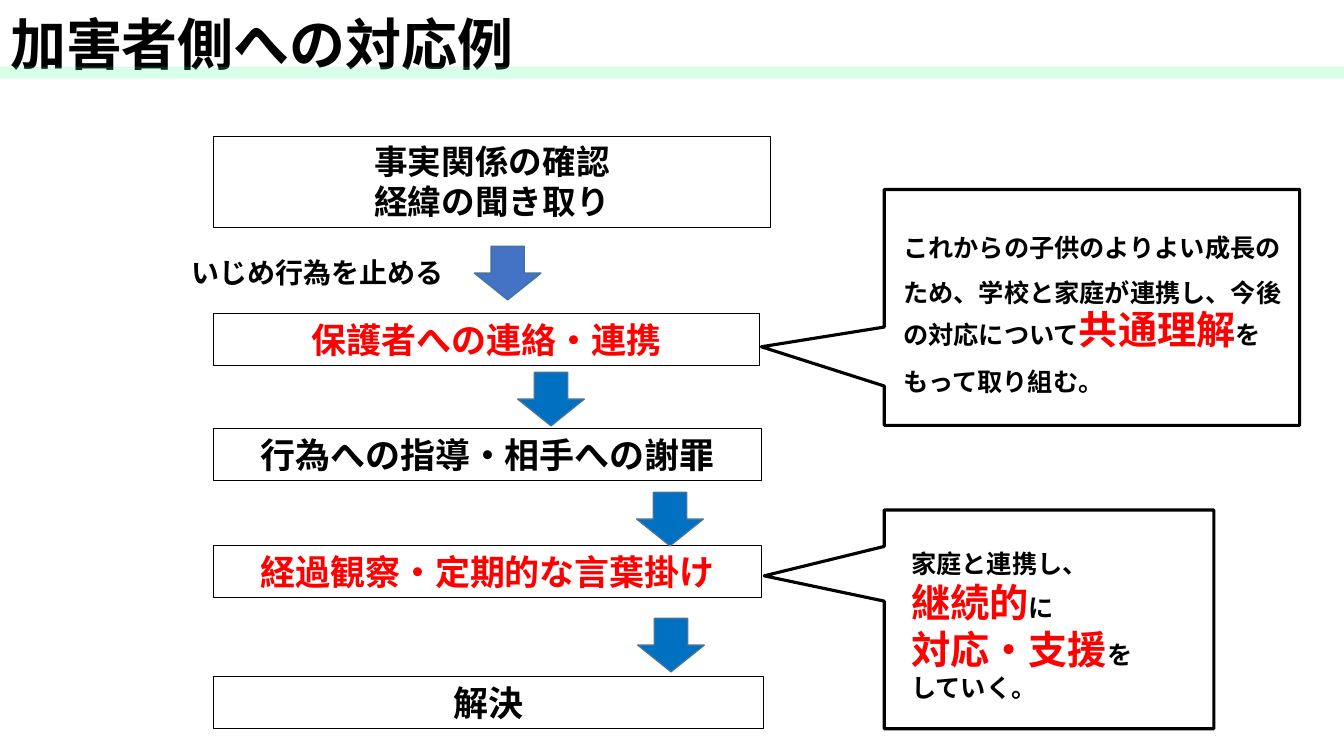
from pptx import Presentation
from pptx.dml.color import RGBColor
from pptx.enum.shapes import MSO_SHAPE as SHAPE
from pptx.enum.text import MSO_ANCHOR as ANCHOR, MSO_AUTO_SIZE as AUTO, PP_ALIGN as ALIGN
from pptx.oxml.ns import qn
from pptx.util import Inches, Pt
from lxml.etree import SubElement

FONT = "Noto Sans CJK JP"
COLORS = {"black": "000000", "red": "FF0000", "white": "FFFFFF", "mint": "3BFF8A",
          "indigo": "4472C4", "blue": "0070C0", "edge": "43739E"}


def add_shape(kind, at, fill=None, line=None, width=1):
    s = slide.shapes.add_shape(kind, *map(Inches, at))
    s.shadow.inherit = False
    if fill:
        s.fill.solid()
        s.fill.fore_color.rgb = RGBColor.from_string(COLORS[fill])
    else:
        s.fill.background()
    if line:
        s.line.color.rgb = RGBColor.from_string(COLORS[line])
        s.line.width = Pt(width)
    else:
        s.line.fill.background()
    return s


def write(s, paragraphs, align=ALIGN.LEFT, anchor=ANCHOR.TOP, fit=AUTO.SHAPE_TO_FIT_TEXT):
    """Fill a shape with paragraphs, each a list of (text, size, colour) runs."""
    tf = s.text_frame
    tf.word_wrap, tf.auto_size, tf.vertical_anchor = True, fit, anchor
    for i, runs in enumerate(paragraphs):
        p = tf.add_paragraph() if i else tf.paragraphs[0]
        p.alignment = align
        for text, size, color in runs:
            r = p.add_run()
            r.text = text
            r.font.size, r.font.bold, r.font.name = Pt(size), True, FONT
            r.font.color.rgb = RGBColor.from_string(COLORS[color])
            SubElement(r.font._element, qn("a:ea"), typeface=FONT)
    return tf


prs = Presentation()
prs.slide_width, prs.slide_height = Inches(13.33), Inches(7.5)
slide = prs.slides.add_slide(prs.slide_layouts[5])

# Title and the translucent band across its foot
title = slide.shapes.title
title.left, title.top, title.width, title.height = map(Inches, (0, 0.04, 9.76, 0.77))
write(title, [[("加害者側への対応例", 40, "black")]], anchor=ANCHOR.MIDDLE, fit=AUTO.NONE)
band = add_shape(SHAPE.RECTANGLE, (0, 0.66, 13.33, 0.12), "mint")
SubElement(band.fill._xPr.find(qn("a:solidFill"))[0], qn("a:alpha"), val="19000")

# Steps: top, width, height, size, colour, lines
STEPS = [
    (1.35, 5.52, 0.91, 24, "black", ["事実関係の確認", "経緯の聞き取り"]),
    (3.11, 5.41, 0.52, 25, "red", ["保護者への連絡・連携"]),
    (4.25, 5.43, 0.52, 25, "black", ["行為への指導・相手への謝罪"]),
    (5.41, 5.43, 0.52, 25, "red", ["経過観察・定期的な言葉掛け"]),
    (6.71, 5.45, 0.52, 25, "black", ["解決"]),
]
for top, width, height, size, color, lines in STEPS:
    s = add_shape(SHAPE.RECTANGLE, (2.12, top, width, height), line="black", width=0.75)
    write(s, [[(line, size, color)] for line in lines], ALIGN.CENTER)

# Arrows between the steps
for left, top, fill in [(4.77, 2.38, "indigo"), (5.2, 3.63, "blue"),
                        (6.38, 4.82, "blue"), (6.39, 6.07, "blue")]:
    arrow = add_shape(SHAPE.RIGHT_ARROW, (left, top, 0.53, 0.66), fill, "edge")
    arrow.rotation = 90

# Callouts pointing back at the red steps
for at, tip, fill in [((8.77, 1.88, 4.12, 2.34), (-0.796, 0.167), None),
                      ((8.77, 5.06, 3.27, 2.17), (-0.864, -0.199), "white")]:
    callout = add_shape(SHAPE.RECTANGULAR_CALLOUT, at, fill, "black", 2.25)
    callout.adjustments[0], callout.adjustments[1] = tip

# Side note and callout texts: place, line spacing, paragraphs
NOTES = [
    ((1.8, 2.49, 3.31, 0.44), None, [[("いじめ行為を止める", 20, "black")]]),
    ((8.86, 2.11, 4.15, 1.9), Pt(32), [
        [("これからの子供のよりよい成長のため、学校と家庭が連携し、今後の対応について", 18, "black"),
         ("共通理解", 28, "red"), ("をもって取り組む。", 18, "black")]]),
    ((8.94, 5.39, 2.67, 1.65), None, [
        [("家庭と連携し、", 18, "black")],
        [("継続的", 28, "red"), ("に", 18, "black")],
        [("対応・支援", 28, "red"), ("を", 18, "black")],
        [("していく。", 18, "black")]]),
]
for at, spacing, paragraphs in NOTES:
    tf = write(slide.shapes.add_textbox(*map(Inches, at)), paragraphs)
    for p in tf.paragraphs:
        p.line_spacing = spacing

prs.save("out.pptx")
